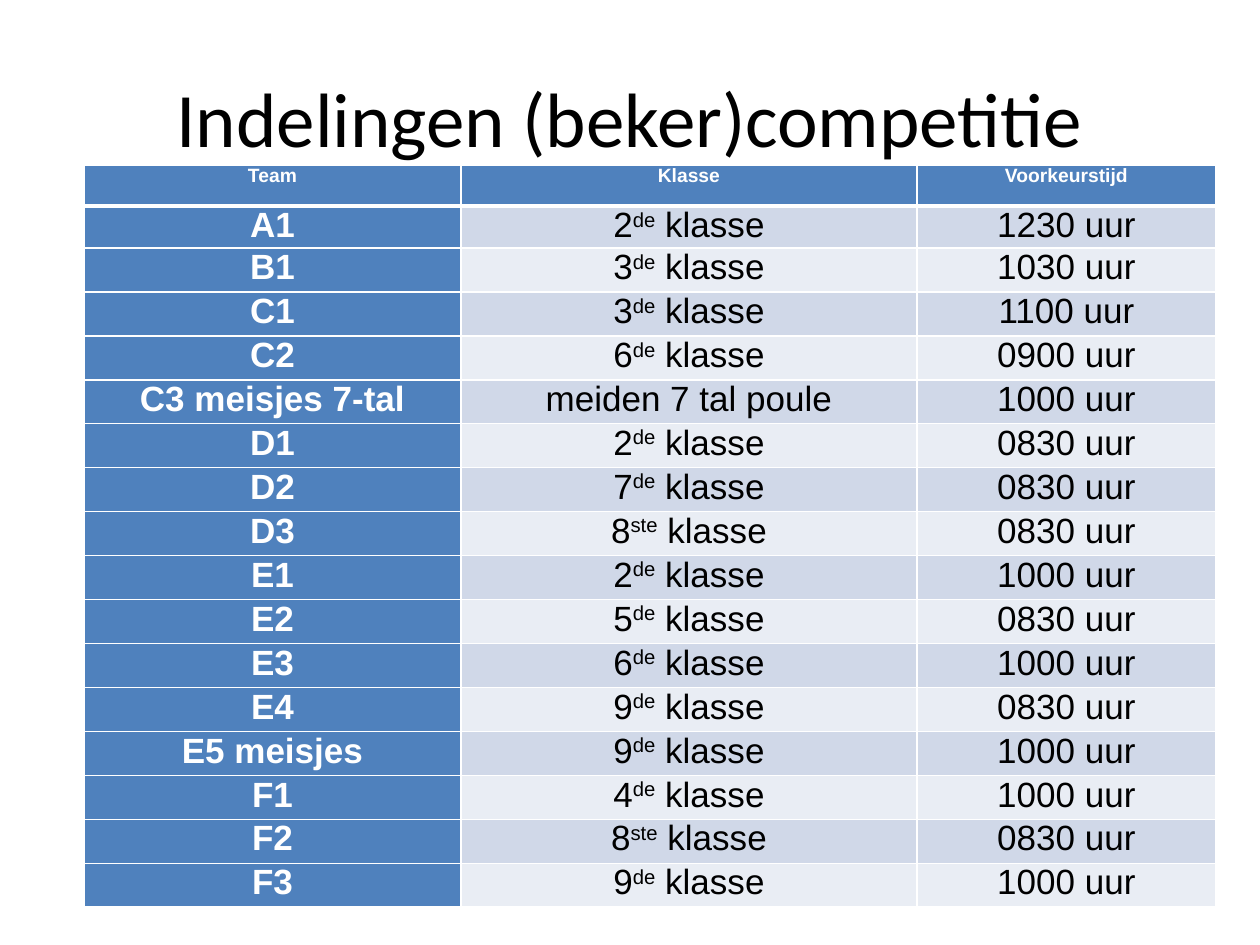
"""Build a slide with the table of team classes and preferred kick-off times."""
import lxml.etree
import pptx
import pptx.dml.color
import pptx.enum.text
import pptx.oxml.ns
import pptx.util

PX = pptx.util.Inches(1) // 126
BLUE, WHITE, BLACK = "4F81BD", "FFFFFF", "000000"
BANDS = ("D0D8E8", "E9EDF4")
COLUMN_WIDTHS = (377, 456, 299)
ROW_HEIGHTS = (41, 42) + (44,) * 15
HEADINGS = ("Team", "Klasse", "Voorkeurstijd")
TEAMS = (
    ("A1", ("2", "de", " klasse"), "1230 uur"),
    ("B1", ("3", "de", " klasse"), "1030 uur"),
    ("C1", ("3", "de", " klasse"), "1100 uur"),
    ("C2", ("6", "de", " klasse"), "0900 uur"),
    ("C3 meisjes 7-tal", ("meiden 7 tal poule",), "1000 uur"),
    ("D1", ("2", "de", " klasse"), "0830 uur"),
    ("D2", ("7", "de", " klasse"), "0830 uur"),
    ("D3", ("8", "ste", " klasse"), "0830 uur"),
    ("E1", ("2", "de", " klasse"), "1000 uur"),
    ("E2", ("5", "de", " klasse"), "0830 uur"),
    ("E3", ("6", "de", " klasse"), "1000 uur"),
    ("E4", ("9", "de", " klasse"), "0830 uur"),
    ("E5 meisjes", ("9", "de", " klasse"), "1000 uur"),
    ("F1", ("4", "de", " klasse"), "1000 uur"),
    ("F2", ("8", "ste", " klasse"), "0830 uur"),
    ("F3", ("9", "de", " klasse"), "1000 uur"),
)


def color(value):
    """Return the colour for a hex string."""
    return pptx.dml.color.RGBColor.from_string(value)


def add_span(para, text, font, size, ink, bold=False, raised=False):
    """Add one formatted run, as superscript if raised."""
    span = para.add_run()
    span.text = text
    span.font.name = font
    span.font.size = pptx.util.Pt(size)
    span.font.bold = bold
    span.font.color.rgb = color(ink)
    if raised:
        span._r.get_or_add_rPr().set("baseline", "30000")


def add_title(page, text):
    """Fill and place the title placeholder."""
    title = page.shapes.title
    title.left, title.top = 63 * PX, 38 * PX
    title.width, title.height = 1134 * PX, 157 * PX
    title.text_frame.vertical_anchor = pptx.enum.text.MSO_ANCHOR.MIDDLE
    para = title.text_frame.paragraphs[0]
    para.alignment = pptx.enum.text.PP_ALIGN.CENTER
    add_span(para, text, "Calibri", 44, BLACK)


def set_borders(cell, top, bottom):
    """Draw white borders with the given top and bottom widths in points."""
    properties = cell._tc.get_or_add_tcPr()
    for side, width in (("L", 1), ("R", 1), ("T", top), ("B", bottom)):
        line = lxml.etree.SubElement(properties, pptx.oxml.ns.qn(f"a:ln{side}"), w=str(pptx.util.Pt(width)))
        fill = lxml.etree.SubElement(line, pptx.oxml.ns.qn("a:solidFill"))
        lxml.etree.SubElement(fill, pptx.oxml.ns.qn("a:srgbClr"), val=WHITE)


def fill_cell(cell, parts, size, ink, background, bold):
    """Write the parts of a cell, the second one raised, on a background."""
    cell.margin_left = cell.margin_right = 9 * PX
    cell.margin_top = cell.margin_bottom = 0
    cell.fill.solid()
    cell.fill.fore_color.rgb = color(background)
    para = cell.text_frame.paragraphs[0]
    para.alignment = pptx.enum.text.PP_ALIGN.CENTER
    for index, part in enumerate(parts):
        add_span(para, part, "Arial", size, ink, bold, raised=index == 1)


def add_team_table(page):
    """Add the table with a header row, a header column and banded rows."""
    rows = (HEADINGS,) + TEAMS
    table = page.shapes.add_table(
        len(rows), len(HEADINGS), 84 * PX, 165 * PX,
        sum(COLUMN_WIDTHS) * PX, sum(ROW_HEIGHTS) * PX).table
    table.first_col = True
    for column, width in zip(table.columns, COLUMN_WIDTHS):
        column.width = width * PX
    for row, height in zip(table.rows, ROW_HEIGHTS):
        row.height = height * PX
    for r, values in enumerate(rows):
        for c, value in enumerate(values):
            cell = table.cell(r, c)
            heading = r == 0 or c == 0
            parts = (value,) if isinstance(value, str) else value
            set_borders(cell, 3 if r == 1 else 1, 3 if r == 0 else 1)
            fill_cell(cell, parts, 20 if r else 11, WHITE if heading else BLACK,
                      BLUE if heading else BANDS[(r - 1) % 2], heading)


def main():
    """Build and save the deck."""
    deck = pptx.Presentation()
    deck.slide_width, deck.slide_height = 1260 * PX, 945 * PX
    page = deck.slides.add_slide(deck.slide_layouts[5])
    add_title(page, "Indelingen (beker)competitie")
    add_team_table(page)
    deck.save("out.pptx")


if __name__ == "__main__":
    main()
